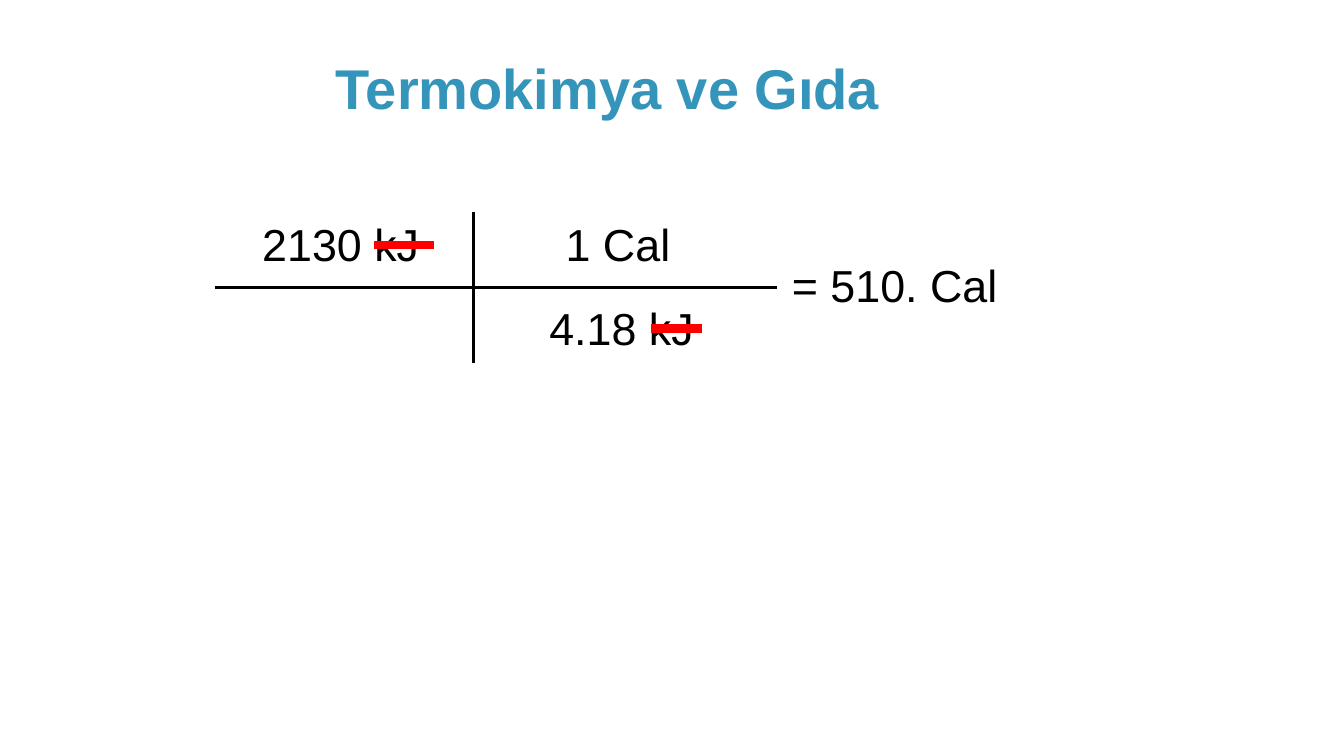
from typing import NamedTuple

from pptx import Presentation
from pptx.dml.color import RGBColor
from pptx.enum.shapes import MSO_CONNECTOR
from pptx.enum.text import MSO_ANCHOR as Anchor, PP_ALIGN as Align
from pptx.oxml.ns import qn
from pptx.slide import Slide
from pptx.util import Emu, Pt
from lxml import etree

PX = 9144  # EMU per px, 100 px to the inch
BLACK, RED, TEAL = "000000", "FF0000", "3494BA"


class Term(NamedTuple):
    text: str
    left: int
    top: int
    width: int


class Rule(NamedTuple):
    x1: int
    y1: int
    x2: int
    y2: int
    color: str = BLACK
    weight: float = 2.25


TERMS = [
    Term("2130 kJ", 188, 210, 300),
    Term("4.18 kJ", 462, 293, 309),
    Term("1 Cal", 471, 210, 284),
    Term("= 510. Cal", 746, 251, 283),
]
FRACTION_BARS = [Rule(213, 285, 771, 285), Rule(470, 210, 470, 360)]
UNIT_STRIKES = [Rule(371, 243, 430, 243, RED, 6), Rule(646, 326, 696, 326, RED, 6)]


def px(n: int) -> Emu:
    return Emu(n * PX)


def rgb(color: str) -> RGBColor:
    return RGBColor.from_string(color)


def add_text(s: Slide, text: str, left: int, top: int, width: int, height: int = 63, *,
             size: int = 32, color: str = BLACK, bold: bool = False,
             anchor: Anchor = Anchor.TOP) -> None:
    tf = s.shapes.add_textbox(px(left), px(top), px(width), px(height)).text_frame
    tf.word_wrap = True
    tf.vertical_anchor = anchor
    p = tf.paragraphs[0]
    p.alignment = Align.CENTER
    r = p.add_run()
    r.text = text
    r.font.name = "Arial"
    r.font.size = Pt(size)
    r.font.bold = bold
    r.font.color.rgb = rgb(color)


def add_rule(s: Slide, rule: Rule) -> None:
    line = s.shapes.add_connector(MSO_CONNECTOR.STRAIGHT, px(rule.x1), px(rule.y1),
                                  px(rule.x2), px(rule.y2))
    line.line.color.rgb = rgb(rule.color)
    line.line.width = Pt(rule.weight)
    etree.SubElement(line._element.spPr, qn("a:effectLst"))


def main() -> None:
    prs = Presentation()
    prs.slide_width, prs.slide_height = px(1333), px(750)
    s = prs.slides.add_slide(prs.slide_layouts[6])

    add_text(s, "Termokimya ve Gıda", 167, 17, 871, 108,
             size=40, color=TEAL, bold=True, anchor=Anchor.BOTTOM)
    for bar in FRACTION_BARS:
        add_rule(s, bar)
    for term in TERMS:
        add_text(s, *term)
    for strike in UNIT_STRIKES:
        add_rule(s, strike)

    prs.save("out.pptx")


if __name__ == "__main__":
    main()
